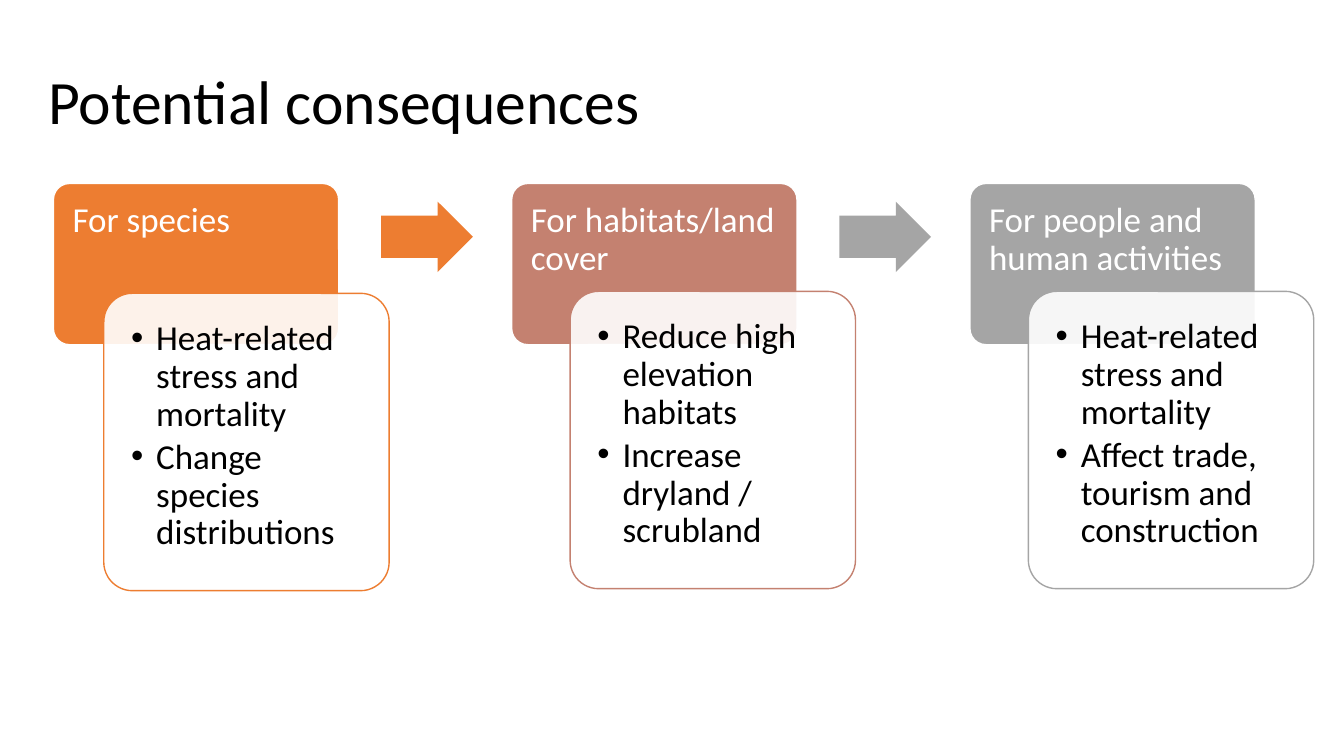
import dataclasses

import lxml.etree
import pptx
import pptx.dml.color
import pptx.enum.shapes
import pptx.enum.text
import pptx.oxml.ns
import pptx.util

Inches = pptx.util.Inches
Pt = pptx.util.Pt
SHAPE = pptx.enum.shapes.MSO_SHAPE
ANCHOR = pptx.enum.text.MSO_ANCHOR
qn = pptx.oxml.ns.qn


@dataclasses.dataclass
class Theme:
    """Colours, font and type sizes of the slide."""
    font: str = "Calibri"
    title_size: int = 44
    body_size: int = 25
    black: str = "000000"
    white: str = "FFFFFF"
    orange: str = "ED7D31"
    rose: str = "C48170"
    grey: str = "A5A5A5"


class Builder:
    """Draws themed elements on the current slide."""

    def __init__(self, slide, theme):
        self.s = slide
        self.theme = theme

    def shape(self, kind, box, adjustments, fill, line=None, opacity=None):
        sp = self.s.shapes.add_shape(kind, *map(Inches, box))
        sp.shadow.inherit = False
        for i, value in enumerate(adjustments):
            sp.adjustments[i] = value
        sp.fill.solid()
        sp.fill.fore_color.rgb = pptx.dml.color.RGBColor.from_string(fill)
        if opacity is not None:
            color = sp.fill._xPr.find(".//" + qn("a:srgbClr"))
            alpha = lxml.etree.SubElement(color, qn("a:alpha"))
            alpha.set("val", str(opacity * 1000))
        if line:
            sp.line.color.rgb = pptx.dml.color.RGBColor.from_string(line)
            sp.line.width = Pt(1)
        else:
            sp.line.fill.background()

    def text(self, box, lines, size, color, insets, anchor=ANCHOR.TOP, after=0, bullet=False):
        tf = self.s.shapes.add_textbox(*map(Inches, box)).text_frame
        tf.word_wrap = True
        tf.vertical_anchor = anchor
        tf.margin_left, tf.margin_top, tf.margin_right, tf.margin_bottom = map(Inches, insets)
        tf.text = "\n".join(lines)
        for p in tf.paragraphs:
            if bullet:
                self.bullet(p)
            p.line_spacing = 0.9
            p.space_after = Pt(after)
            for r in p.runs:
                r.font.name = self.theme.font
                r.font.size = Pt(size)
                r.font.color.rgb = pptx.dml.color.RGBColor.from_string(color)

    def bullet(self, p):
        p.level = 1
        pPr = p._p.get_or_add_pPr()
        pPr.set("marL", str(Inches(0.25)))
        pPr.set("indent", str(-Inches(0.25)))
        lxml.etree.SubElement(pPr, qn("a:buFont")).set("typeface", "Arial")
        lxml.etree.SubElement(pPr, qn("a:buChar")).set("char", "•")

    def title(self, text):
        self.text((0.38, 0.21, 12.96, 1.66), [text], self.theme.title_size,
                  self.theme.black, (0.1, 0.05, 0.1, 0.05), ANCHOR.MIDDLE)

    def header(self, x, y, text, color):
        self.shape(SHAPE.ROUNDED_RECTANGLE, (x, y, 2.83, 1.6), [0.1], color, self.theme.white)
        self.text((x, y, 2.83, 1.07), [text], self.theme.body_size,
                  self.theme.white, (0.19, 0.19, 0.19, 0.1), after=8.75)

    def card(self, x, y, points, color):
        self.shape(SHAPE.ROUNDED_RECTANGLE, (x, y, 2.83, 2.95), [0.1], self.theme.white, color, 90)
        self.text((x + 0.08, y + 0.08, 2.66, 2.79), points, self.theme.body_size,
                  self.theme.black, (0.19,) * 4, after=3.75, bullet=True)

    def arrow(self, x, y, color):
        self.shape(SHAPE.RIGHT_ARROW, (x, y, 0.91, 0.7), [0.6, 0.5], color)


def main():
    prs = pptx.Presentation()
    prs.slide_width, prs.slide_height = Inches(13.33), Inches(7.5)
    theme = Theme()
    b = Builder(prs.slides.add_slide(prs.slide_layouts[6]), theme)
    b.title("Potential consequences")

    groups = [
        ("For species", theme.orange, 0.5, 2.91,
         ["Heat-related stress and mortality", "Change species distributions"]),
        ("For habitats/land cover", theme.rose, 0.58, 2.89,
         ["Reduce high elevation habitats", "Increase dryland / scrubland"]),
        ("For people and human activities", theme.grey, 0.58, 2.89,
         ["Heat-related stress and mortality", "Affect trade, tourism and construction"]),
    ]
    left, top, pitch = 0.53, 1.82, 4.545
    for i, (heading, color, card_shift, card_top, points) in enumerate(groups):
        x = left + i * pitch
        b.header(x, top, heading, color)
        b.card(x + card_shift, card_top, points, color)
    for i, color in enumerate([theme.orange, theme.grey]):
        b.arrow(left + i * pitch + 3.25, 2, color)

    prs.save("out.pptx")


if __name__ == "__main__":
    main()
